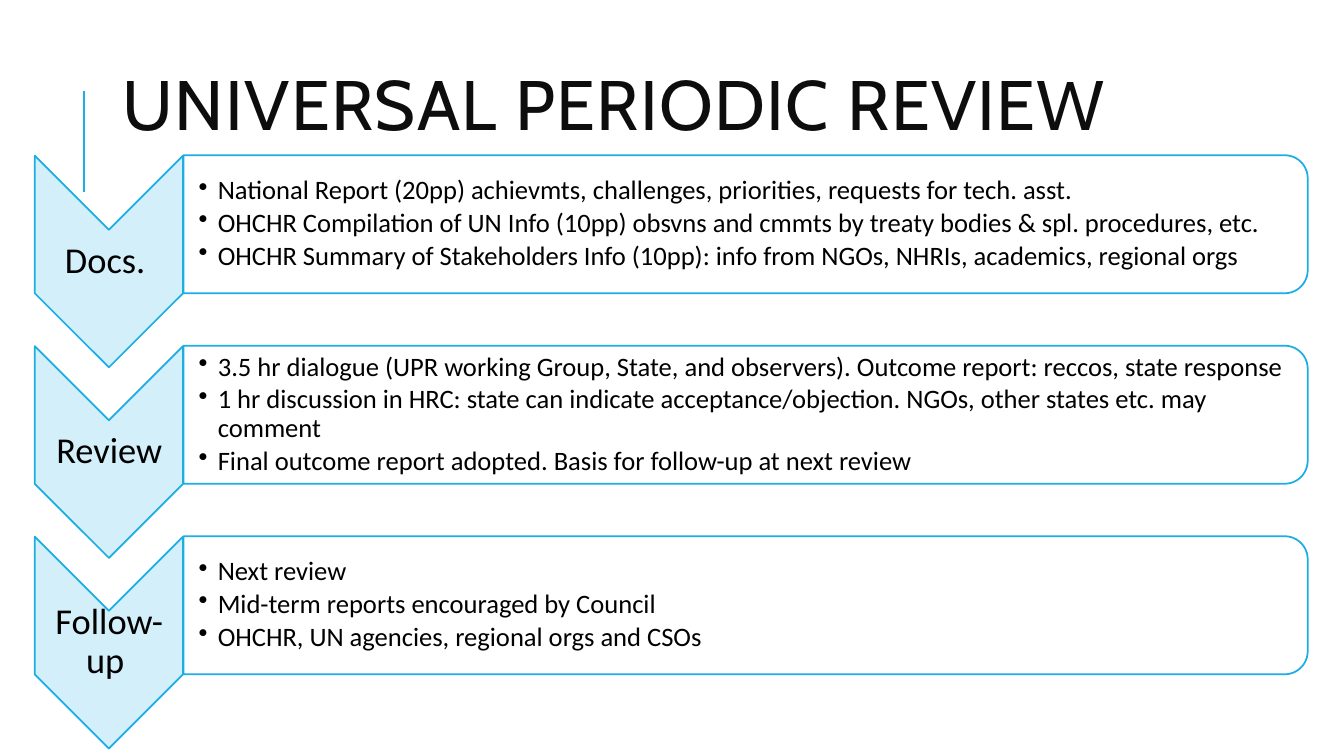
from dataclasses import dataclass

import pptx
import pptx.oxml
import pptx.util
from lxml import etree
from pptx.dml.color import RGBColor
from pptx.enum.shapes import MSO_CONNECTOR, MSO_SHAPE
from pptx.enum.text import MSO_ANCHOR, PP_ALIGN
from pptx.oxml.ns import qn
from pptx.util import Inches, Pt


@dataclass(frozen=True)
class Theme:
    accent: str = "1CADE4"
    chevron: str = "D2EFFA"
    panel: str = "FFFFFF"
    title: str = "0D0D0D"
    body: str = "000000"
    title_font: str = "Cabin"
    body_font: str = "Calibri"
    title_size: int = 50
    stage_size: int = 26
    bullet_size: int = 19


THEME = Theme()
STAGE_PITCH = 1.89
STAGES = [
    ("Docs. ", [
        "National Report (20pp) achievmts, challenges, priorities, requests for tech. asst.",
        "OHCHR Compilation of UN Info (10pp) obsvns and cmmts by treaty bodies & spl. procedures, etc.",
        "OHCHR Summary of Stakeholders Info (10pp): info from NGOs, NHRIs, academics, regional orgs",
    ]),
    ("Review", [
        "3.5 hr dialogue (UPR working Group, State, and observers). Outcome report: reccos, state response",
        "1 hr discussion in HRC: state can indicate acceptance/objection. NGOs, other states etc. may comment",
        "Final outcome report adopted. Basis for follow-up at next review",
    ]),
    ("Follow-up ", [
        "Next review",
        "Mid-term reports encouraged by Council",
        "OHCHR, UN agencies, regional orgs and CSOs",
    ]),
]


def add_rotated_shape(page, kind, left, top, width, height, fill):
    """Add an outlined shape turned a quarter clockwise."""
    shape = page.shapes.add_shape(
        kind, Inches(left), Inches(top), Inches(width), Inches(height))
    shape.rotation = 90
    shape.shadow.inherit = False
    shape.fill.solid()
    shape.fill.fore_color.rgb = RGBColor.from_string(fill)
    shape.line.color.rgb = RGBColor.from_string(THEME.accent)
    shape.line.width = Pt(1.25)
    return shape


def set_opacity(shape, percent):
    color = shape.fill._xPr.find(qn("a:solidFill"))[0]
    etree.SubElement(color, qn("a:alpha")).set("val", str(percent * 1000))


def add_text(page, left, top, width, height, lines, font, size, color,
             spacing=0.9, after=0, insets=(0.1, 0.05, 0.1, 0.05)):
    box = page.shapes.add_textbox(
        Inches(left), Inches(top), Inches(width), Inches(height))
    frame = box.text_frame
    frame.word_wrap = True
    frame.vertical_anchor = MSO_ANCHOR.MIDDLE
    (frame.margin_left, frame.margin_top,
     frame.margin_right, frame.margin_bottom) = map(Inches, insets)
    frame.text = "\n".join(lines)
    for para in frame.paragraphs:
        para.line_spacing = spacing
        para.space_after = Pt(after)
        for span in para.runs:
            span.font.name = font
            span.font.size = Pt(size)
            span.font.color.rgb = RGBColor.from_string(color)
    return frame


def add_bullet(para):
    para.level = 1
    properties = para._p.get_or_add_pPr()
    properties.set("marL", str(Inches(0.19)))
    properties.set("indent", str(-Inches(0.19)))
    etree.SubElement(properties, qn("a:buChar")).set("char", "•")


def add_title(page):
    rule = page.shapes.add_connector(
        MSO_CONNECTOR.STRAIGHT,
        Inches(0.83), Inches(1.9), Inches(0.83), Inches(0.9))
    rule.line.color.rgb = RGBColor.from_string(THEME.accent)
    rule.line.width = Pt(1.5)
    etree.SubElement(rule._element.spPr, qn("a:effectLst"))
    frame = add_text(page, 1.12, 0.64, 10.63, 0.9, ["UNIVERSAL PERIODIC REVIEW"],
                     THEME.title_font, THEME.title_size, THEME.title, spacing=0.8)
    frame.paragraphs[0].runs[0].font._element.set("spc", "100")


def add_stage(page, top, name, points):
    """Add one chevron with its name and the bulleted panel beside it."""
    add_rotated_shape(page, MSO_SHAPE.CHEVRON, 0.03, top + 0.32, 2.1, 1.47,
                      THEME.chevron)
    label = add_text(page, 0.35, top + 0.74, 1.47, 0.63, [name], THEME.body_font,
                     THEME.stage_size, THEME.body, after=9, insets=(0.02,) * 4)
    label.paragraphs[0].alignment = PP_ALIGN.CENTER
    panel = add_rotated_shape(page, MSO_SHAPE.ROUND_2_SAME_RECTANGLE,
                              6.71, top - 4.89, 1.37, 11.15, THEME.panel)
    set_opacity(panel, 90)
    frame = add_text(page, 1.82, top + 0.07, 11.08, 1.23, points, THEME.body_font,
                     THEME.bullet_size, THEME.body, after=3,
                     insets=(0.15, 0.01, 0.01, 0.01))
    for para in frame.paragraphs:
        add_bullet(para)


def main():
    deck = pptx.Presentation()
    deck.slide_width = Inches(13.33)
    deck.slide_height = Inches(7.5)
    page = deck.slides.add_slide(deck.slide_layouts[6])
    add_title(page)
    for index, (name, points) in enumerate(STAGES):
        add_stage(page, 1.54 + index * STAGE_PITCH, name, points)
    deck.save("out.pptx")


if __name__ == "__main__":
    main()
